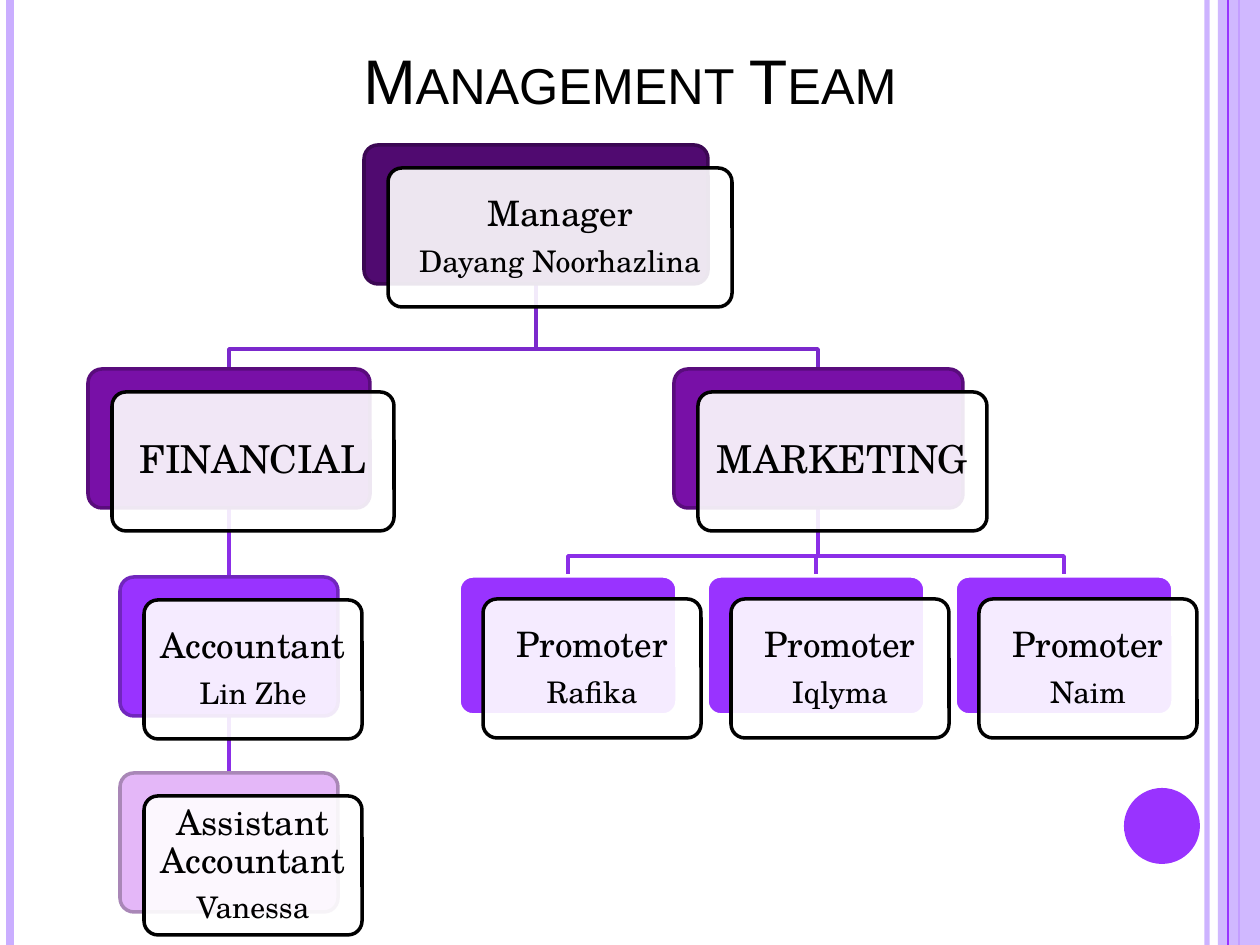
from dataclasses import dataclass

from pptx import Presentation
from pptx import util as u
from pptx.dml.color import RGBColor
from pptx.enum import shapes, text
from pptx.oxml.ns import qn
from pptx.oxml.xmlchemy import OxmlElement

PX = 914400 / 126
COLORS = {
    "black": "000000", "white": "FFFFFF", "lilac": "CAAEFF", "violet": "9933FF",
    "manager": "500A70", "manager edge": "3B0753",
    "department": "7810A7", "department edge": "590C7C",
    "staff edge": "7126BD", "assistant": "E4B7F8", "assistant edge": "A987B7",
    "top link": "7B29CC", "link": "8B2EE7",
}
BODY_FONT = "TeX Gyre Schola"
CARD_HEIGHT = 139
CARD_SHIFT = (24, 23)
BEND_ABOVE_CHILD = 20


@dataclass
class Post:
    lines: list  # (wording, point size) pairs
    left: int
    top: int
    width: int
    fill: str
    edge: str
    parent: str = ""

    @property
    def center(self):
        return self.left + self.width // 2

    @property
    def bottom(self):
        return self.top + CARD_HEIGHT


def px(*lengths):
    return [u.Emu(round(length * PX)) for length in lengths]


def rgb(name):
    return RGBColor.from_string(COLORS[name])


def apply(target, formats):
    for name, value in formats.items():
        setattr(target, name, value)


def set_opacity(properties, percent):
    """Make the first colour in a shape's properties partly transparent."""
    alpha = OxmlElement("a:alpha")
    alpha.set("val", str(percent * 1000))
    properties.find(".//" + qn("a:srgbClr")).append(alpha)


def paint(shape, fill, edge=None, opacity=100):
    shape.shadow.inherit = False
    shape.fill.solid()
    shape.fill.fore_color.rgb = rgb(fill)
    if opacity < 100:
        set_opacity(shape._element.spPr, opacity)
    if edge:
        stroke(shape, edge, 2)
    else:
        shape.line.fill.background()


def stroke(shape, color, points):
    shape.line.color.rgb = rgb(color)
    shape.line.width = u.Pt(points)


def add_line(slide, start, end, color, points, opacity=100):
    line = slide.shapes.add_connector(shapes.MSO_CONNECTOR.STRAIGHT, *px(*start, *end))
    stroke(line, color, points)
    properties = line._element.spPr
    if opacity < 100:
        set_opacity(properties, opacity)
    properties.append(OxmlElement("a:effectLst"))


def add_side_decor(slide):
    def rule(x, color, points, opacity=100):
        add_line(slide, (x, 0), (x, 945), color, points, opacity)

    rule(1207, "lilac", 3, 93)
    rule(10, "lilac", 4.5)
    rule(1239, "violet", 1.5)
    band = slide.shapes.add_shape(shapes.MSO_SHAPE.RECTANGLE, *px(1218, 0, 42, 945))
    paint(band, "lilac", opacity=87)
    rule(1228, "violet", 0.75)
    disc = slide.shapes.add_shape(shapes.MSO_SHAPE.OVAL, *px(1124, 788, 76, 76))
    paint(disc, "violet")


def add_title(slide, wording):
    title = slide.shapes.title
    apply(title, dict(zip(("left", "top", "width", "height"), px(63, 0, 1134, 158))))
    title.text_frame.vertical_anchor = text.MSO_ANCHOR.MIDDLE
    paragraph = title.text_frame.paragraphs[0]
    paragraph.alignment = text.PP_ALIGN.CENTER
    run = paragraph.add_run()
    run.text = wording
    apply(run.font, {"name": "Arial", "size": u.Pt(36)})
    run.font.color.rgb = rgb("black")
    run._r.get_or_add_rPr().set("cap", "small")


def add_link(slide, boss, post):
    color = "link" if boss.parent else "top link"
    start, end = (boss.center, boss.bottom), (post.center, post.top)
    if boss.center == post.center:
        add_line(slide, start, end, color, 2)
        return
    bend = post.top - BEND_ABOVE_CHILD
    builder = slide.shapes.build_freeform(*start, scale=PX)
    builder.add_line_segments([(boss.center, bend), (post.center, bend), end], close=False)
    elbow = builder.convert_to_shape()
    elbow.shadow.inherit = False
    elbow.fill.background()
    stroke(elbow, color, 2)


def add_post(slide, post):
    """Draw a coloured card with a see-through text card shifted over it."""
    def card(shift_x, shift_y, *look):
        shape = slide.shapes.add_shape(
            shapes.MSO_SHAPE.ROUNDED_RECTANGLE,
            *px(post.left + shift_x, post.top + shift_y, post.width, CARD_HEIGHT))
        shape.adjustments[0] = 0.1
        paint(shape, *look)
        return shape

    card(0, 0, post.fill, post.edge)
    frame = card(*CARD_SHIFT, "white", "black", 90).text_frame
    margins = ("margin_left", "margin_top", "margin_right", "margin_bottom")
    apply(frame, dict.fromkeys(margins, px(10)[0]))
    apply(frame, {"word_wrap": True, "vertical_anchor": text.MSO_ANCHOR.MIDDLE})
    for index, (wording, size) in enumerate(post.lines):
        paragraph = frame.add_paragraph() if index else frame.paragraphs[0]
        apply(paragraph, {"alignment": text.PP_ALIGN.CENTER, "line_spacing": 0.9,
                          "space_after": u.Pt(round(size * 0.35))})
        run = paragraph.add_run()
        run.text = wording
        apply(run.font, {"name": BODY_FONT, "size": u.Pt(size)})
        run.font.color.rgb = rgb("black")


def team():
    def role(job, person):
        return [(job, 20), (person, 17)]

    department = ("department", "department edge", "manager")
    posts = {
        "manager": Post(role("Manager", "Dayang Noorhazlina"), 364, 145, 344,
                        "manager", "manager edge"),
        "financial": Post([("FINANCIAL", 22)], 88, 369, 282, *department),
        "accountant": Post(role("Accountant", "Lin Zhe"), 120, 577, 218,
                           "violet", "staff edge", "financial"),
        "assistant": Post(role("Assistant Accountant", "Vanessa"), 120, 773, 218,
                          "assistant", "assistant edge", "accountant"),
        "marketing": Post([("MARKETING", 22)], 674, 369, 289, *department),
    }
    for index, person in enumerate(("Rafika", "Iqlyma", "Naim")):
        posts[person] = Post(role("Promoter", person), 459 + 248 * index, 576, 218,
                             "violet", "white", "marketing")
    return posts


def main():
    deck = Presentation()
    deck.slide_width, deck.slide_height = px(1260, 945)
    slide = deck.slides.add_slide(deck.slide_layouts[5])
    add_side_decor(slide)
    add_title(slide, "Management Team")
    posts = team()
    for post in posts.values():
        if post.parent:
            add_link(slide, posts[post.parent], post)
    for post in posts.values():
        add_post(slide, post)
    deck.save("out.pptx")


if __name__ == "__main__":
    main()
